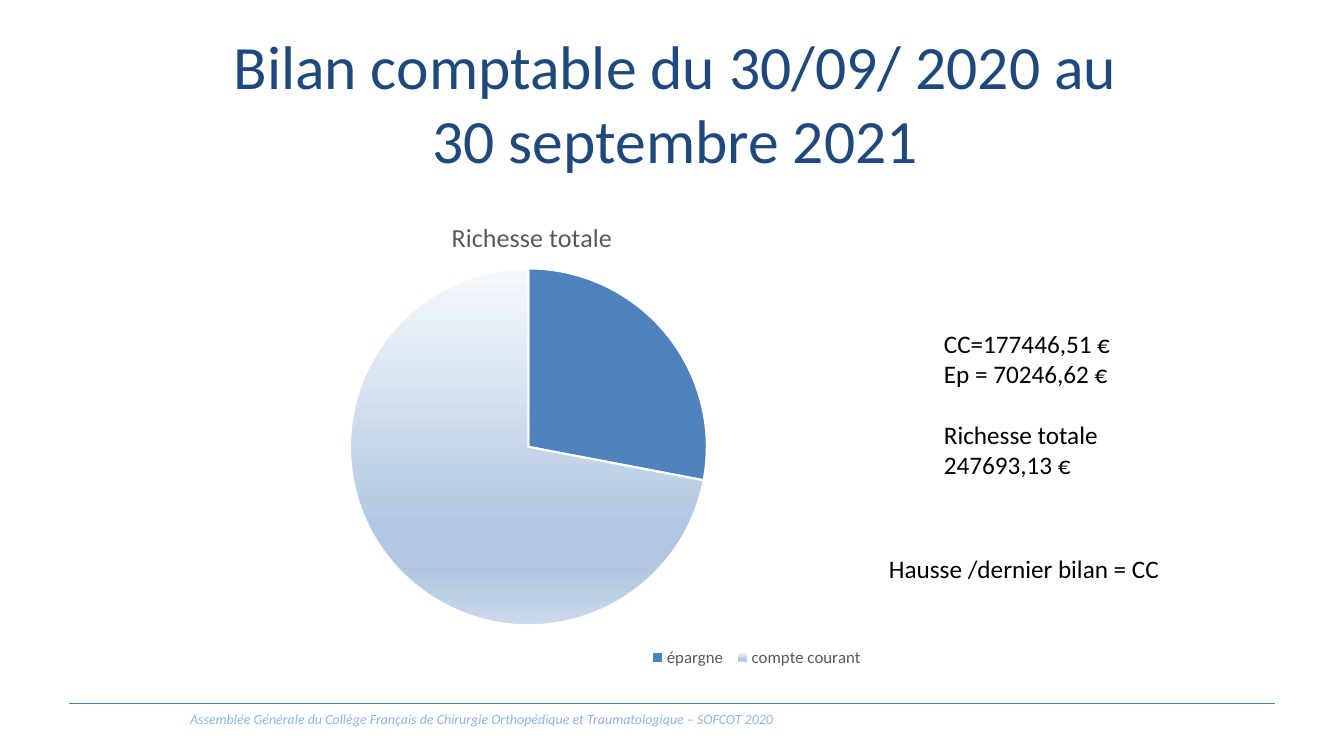
from lxml.etree import SubElement
from pptx import Presentation
from pptx.chart.data import CategoryChartData
from pptx.dml.color import RGBColor
from pptx.enum.chart import XL_CHART_TYPE as ChartType, XL_LEGEND_POSITION as LegendPosition
from pptx.enum.shapes import MSO_CONNECTOR as Connector
from pptx.enum.text import MSO_ANCHOR as Anchor, PP_ALIGN as Align
from pptx.oxml.ns import qn
from pptx.util import Pt

# Content
TITLE = "Bilan comptable du 30/09/ 2020 au 30 septembre 2021"
FOOTER = "Assemblée Générale du Collège Français de Chirurgie Orthopédique et Traumatologique – SOFCOT 2020"
ACCOUNTS = ["CC=177446,51 €", "Ep = 70246,62 €"]
TOTAL = ["Richesse totale", "247693,13 €"]
TREND = "Hausse /dernier bilan = CC"
CHART_TITLE = "Richesse totale"
SHARES = {"épargne": 28, "compte courant": 72}

FONT = "Calibri"
COLORS = {
    "title": "1F497D", "text": "000000", "muted": "595959", "footer": "8EB4E3",
    "rule": "4B7EBC", "savings": "4F81BD", "border": "FFFFFF",
}
CURRENT_GRADIENT = [(0, "F6F9FC"), (74, "B0C6E1"), (83, "B0C6E1"), (100, "CAD9EB")]

# Boxes in px: left, top, width, height
SLIDE_SIZE = (1344, 756)
TITLE_BOX = (187, 30, 977, 144)
FOOTER_BOX = (69, 706, 825, 27)
AMOUNTS_BOX = (934, 323, 207, 163)
TREND_BOX = (879, 548, 293, 40)
CHART_BOX = (177, 190, 702, 485)
PIE_BOX = (350, 268, 357, 358)
CHART_TITLE_BOX = (447, 215, 161, 30)
LEGEND_BOX = (644, 650, 226, 23)
RULE = (69, 704, 1275, 704)
EMU_PER_PX = 914400 / 100.8


def px(*lengths):
    return [round(length * EMU_PER_PX) for length in lengths]


def set_font(font, size, color, italic=False):
    font.name, font.size, font.italic, font.bold = FONT, Pt(size), italic, False
    font.color.rgb = RGBColor.from_string(COLORS[color])


def add_text(slide, groups, box, size=18, color="text", align=Align.LEFT,
             anchor=Anchor.TOP, italic=False, gap=0):
    """Each group is a list of lines; gap is the space in points between groups."""
    frame = slide.shapes.add_textbox(*px(*box)).text_frame
    frame.word_wrap = True
    frame.vertical_anchor = anchor
    lines = [(line, bool(group_index and not line_index))
             for group_index, group in enumerate(groups)
             for line_index, line in enumerate(group)]
    for index, (line, opens_group) in enumerate(lines):
        paragraph = frame.add_paragraph() if index else frame.paragraphs[0]
        paragraph.alignment = align
        if opens_group:
            paragraph.space_before = Pt(gap)
        run = paragraph.add_run()
        run.text = line
        set_font(run.font, size, color, italic)


def place_in_chart(element, box, after=None, sized=True):
    """Fix the place of a chart part, as fractions of the chart area."""
    for old in element.findall(qn("c:layout")):
        element.remove(old)
    layout = element.makeelement(qn("c:layout"))
    element.insert(element.index(element.find(qn(after))) + 1 if after else 0, layout)
    manual = SubElement(layout, qn("c:manualLayout"))
    if element.tag == qn("c:plotArea"):
        SubElement(manual, qn("c:layoutTarget")).set("val", "inner")
    left, top, width, height = CHART_BOX
    fractions = {"x": (box[0] - left) / width, "y": (box[1] - top) / height}
    for name in fractions:
        SubElement(manual, qn(f"c:{name}Mode")).set("val", "edge")
    if sized:
        fractions.update(w=box[2] / width, h=box[3] / height)
    for name, value in fractions.items():
        SubElement(manual, qn(f"c:{name}")).set("val", f"{value:.4f}")


def add_pie(slide):
    data = CategoryChartData()
    data.categories = list(SHARES)
    data.add_series("Series 1", list(SHARES.values()))
    chart = slide.shapes.add_chart(ChartType.PIE, *px(*CHART_BOX), data).chart
    set_font(chart.font, 10, "text")

    # Title and legend
    chart.has_title = True
    title_paragraph = chart.chart_title.text_frame.paragraphs[0]
    title_run = title_paragraph.add_run()
    title_run.text = CHART_TITLE
    set_font(title_run.font, 18.6, "muted")
    chart.has_legend = True
    chart.legend.position = LegendPosition.BOTTOM
    chart.legend.include_in_layout = False
    set_font(chart.legend.font, 12, "muted")

    # Slices
    plot = chart.plots[0]
    plot.vary_by_categories = True
    series = plot.series[0]
    savings, current = [series.points[index].format for index in range(len(SHARES))]
    for slice_format in (savings, current):
        slice_format.line.color.rgb = RGBColor.from_string(COLORS["border"])
        slice_format.line.width = Pt(1.5)
    savings.fill.solid()
    savings.fill.fore_color.rgb = RGBColor.from_string(COLORS["savings"])
    current.fill.gradient()
    gradient = next(series._element.iter(qn("a:gradFill")))
    for child in list(gradient):
        gradient.remove(child)
    stops = SubElement(gradient, qn("a:gsLst"))
    for percent, color in CURRENT_GRADIENT:
        stop = SubElement(stops, qn("a:gs"), pos=str(percent * 1000))
        SubElement(stop, qn("a:srgbClr"), val=color)
    SubElement(gradient, qn("a:lin"), ang="5400000", scaled="0")

    # Places inside the chart
    plot_area = next(chart._chartSpace.iter(qn("c:plotArea")))
    place_in_chart(plot_area, PIE_BOX)
    place_in_chart(chart.chart_title._element, CHART_TITLE_BOX, after="c:tx", sized=False)
    place_in_chart(chart.legend._element, LEGEND_BOX, after="c:legendPos")


def main():
    presentation = Presentation()
    presentation.slide_width, presentation.slide_height = px(*SLIDE_SIZE)
    slide = presentation.slides.add_slide(presentation.slide_layouts[6])

    # Footer
    rule = slide.shapes.add_connector(Connector.STRAIGHT, *px(*RULE))
    rule.line.color.rgb = RGBColor.from_string(COLORS["rule"])
    rule.line.width = Pt(0.75)
    SubElement(rule._element.spPr, qn("a:effectLst"))
    add_text(slide, [[FOOTER]], FOOTER_BOX, size=10, color="footer",
             align=Align.CENTER, italic=True)

    # Title, chart and amounts
    add_text(slide, [[TITLE]], TITLE_BOX, size=44, color="title",
             align=Align.CENTER, anchor=Anchor.MIDDLE)
    add_pie(slide)
    add_text(slide, [ACCOUNTS, TOTAL], AMOUNTS_BOX, gap=22)
    add_text(slide, [[TREND]], TREND_BOX)

    presentation.save("out.pptx")


if __name__ == "__main__":
    main()
